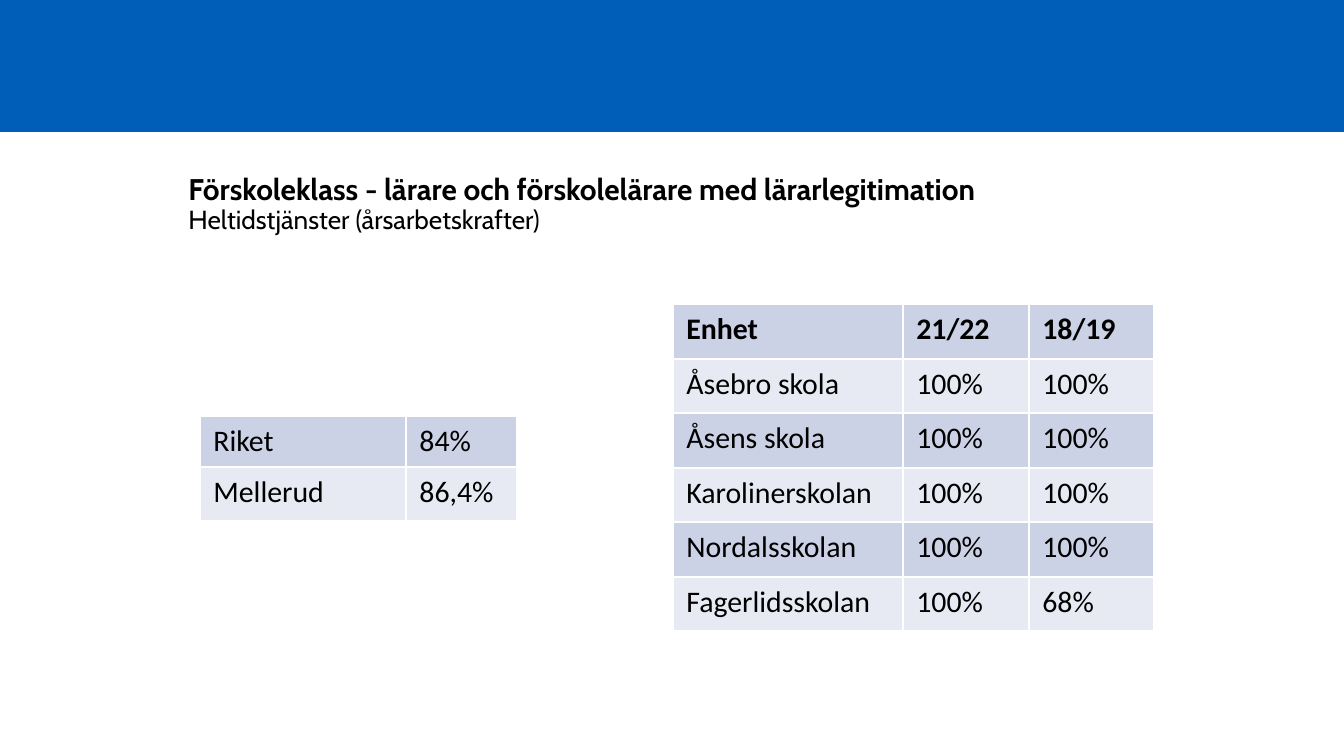
from lxml import etree
from pptx import Presentation
from pptx import util as u
from pptx.dml import color
from pptx.enum import shapes, text
from pptx.oxml import ns

PX = 914400 / 134.4
BLUE, BLACK, WHITE = "005EB8", "000000", "FFFFFF"
BANDS = ["CCD2E6", "E7EAF3"]


def px(length):
    return u.Emu(round(length * PX))


def rgb(value):
    return color.RGBColor.from_string(value)


def add_span(para, content, font="Calibri", size=16, bold=False, fill=BLACK):
    span = para.add_run()
    span.text = content
    span.font.name = font
    span.font.size = u.Pt(size)
    span.font.bold = bold
    span.font.color.rgb = rgb(fill)


class Slide:
    def __init__(self, deck):
        self.page = deck.slides.add_slide(deck.slide_layouts[5])

    def band(self, left, top, width, height, fill):
        box = self.page.shapes.add_shape(
            shapes.MSO_SHAPE.RECTANGLE, px(left), px(top), px(width), px(height))
        box.shadow.inherit = False
        box.fill.solid()
        box.fill.fore_color.rgb = rgb(fill)
        box.line.fill.background()

    def title(self, left, top, width, height, heading, subheading):
        box = self.page.shapes.title
        box.left, box.top, box.width, box.height = map(px, (left, top, width, height))
        frame = box.text_frame
        frame.word_wrap = True
        frame.auto_size = text.MSO_AUTO_SIZE.NONE
        frame.vertical_anchor = text.MSO_ANCHOR.BOTTOM
        frame.margin_bottom = px(42)
        para = frame.paragraphs[0]
        para.alignment = text.PP_ALIGN.LEFT
        para.line_spacing = 0.9
        add_span(para, heading, font="Cabin", bold=True)
        para.add_line_break()
        add_span(para, subheading, font="Cabin", size=14)

    def table(self, left, top, widths, heights, rows, header=False):
        table = self.page.shapes.add_table(
            len(rows), len(widths), px(left), px(top),
            px(sum(widths)), px(sum(heights))).table
        table.first_row = header
        table.horz_banding = False
        for column, width in zip(table.columns, widths):
            column.width = px(width)
        for index, (row, height, values) in enumerate(zip(table.rows, heights, rows)):
            row.height = px(height)
            for cell, value in zip(row.cells, values):
                cell.fill.solid()
                cell.fill.fore_color.rgb = rgb(BANDS[index % 2])
                self.borders(cell)
                add_span(cell.text_frame.paragraphs[0], value,
                         bold=header and index == 0)

    def borders(self, cell):
        properties = cell._tc.get_or_add_tcPr()
        for index, side in enumerate(("lnL", "lnR", "lnT", "lnB")):
            line = etree.Element(ns.qn(f"a:{side}"), w=str(u.Pt(1)))
            fill = etree.SubElement(line, ns.qn("a:solidFill"))
            etree.SubElement(fill, ns.qn("a:srgbClr"), val=WHITE)
            properties.insert(index, line)


def main():
    deck = Presentation()
    deck.slide_width, deck.slide_height = px(1344), px(756)
    slide = Slide(deck)
    slide.band(0, 0, 1344, 132, BLUE)
    slide.title(175, 169, 1196, 108,
                "Förskoleklass - lärare och förskolelärare med lärarlegitimation",
                "Heltidstjänster (årsarbetskrafter)")
    slide.table(200, 416, [206, 111], [51, 54],
                [("Riket", "84%"), ("Mellerud", "86,4%")])
    slide.table(673, 304, [230, 126, 125], [55, 54] * 3, [
        ("Enhet", "21/22", "18/19"),
        ("Åsebro skola", "100%", "100%"),
        ("Åsens skola", "100%", "100%"),
        ("Karolinerskolan", "100%", "100%"),
        ("Nordalsskolan", "100%", "100%"),
        ("Fagerlidsskolan", "100%", "68%"),
    ], header=True)
    deck.save("out.pptx")


if __name__ == "__main__":
    main()
